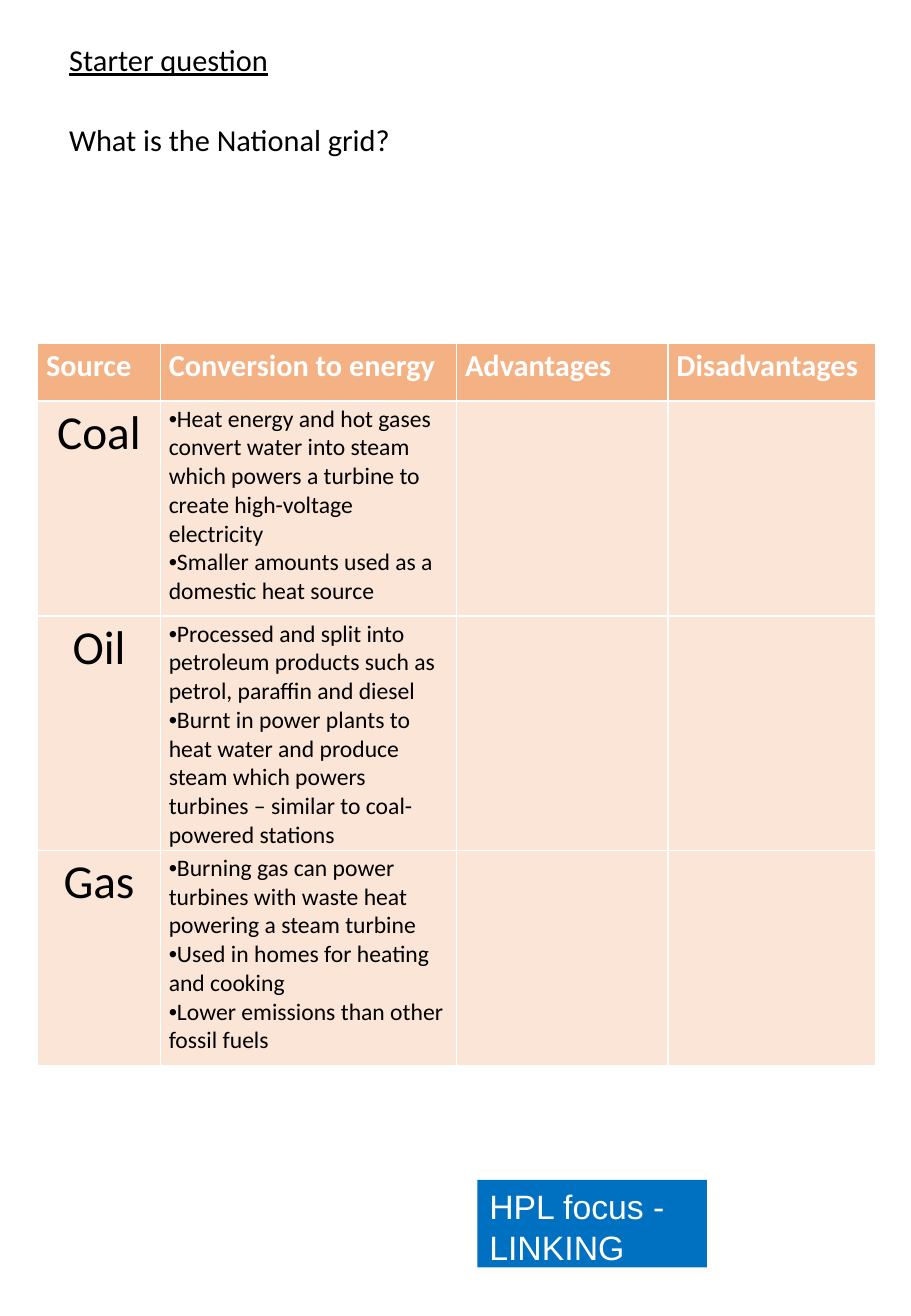
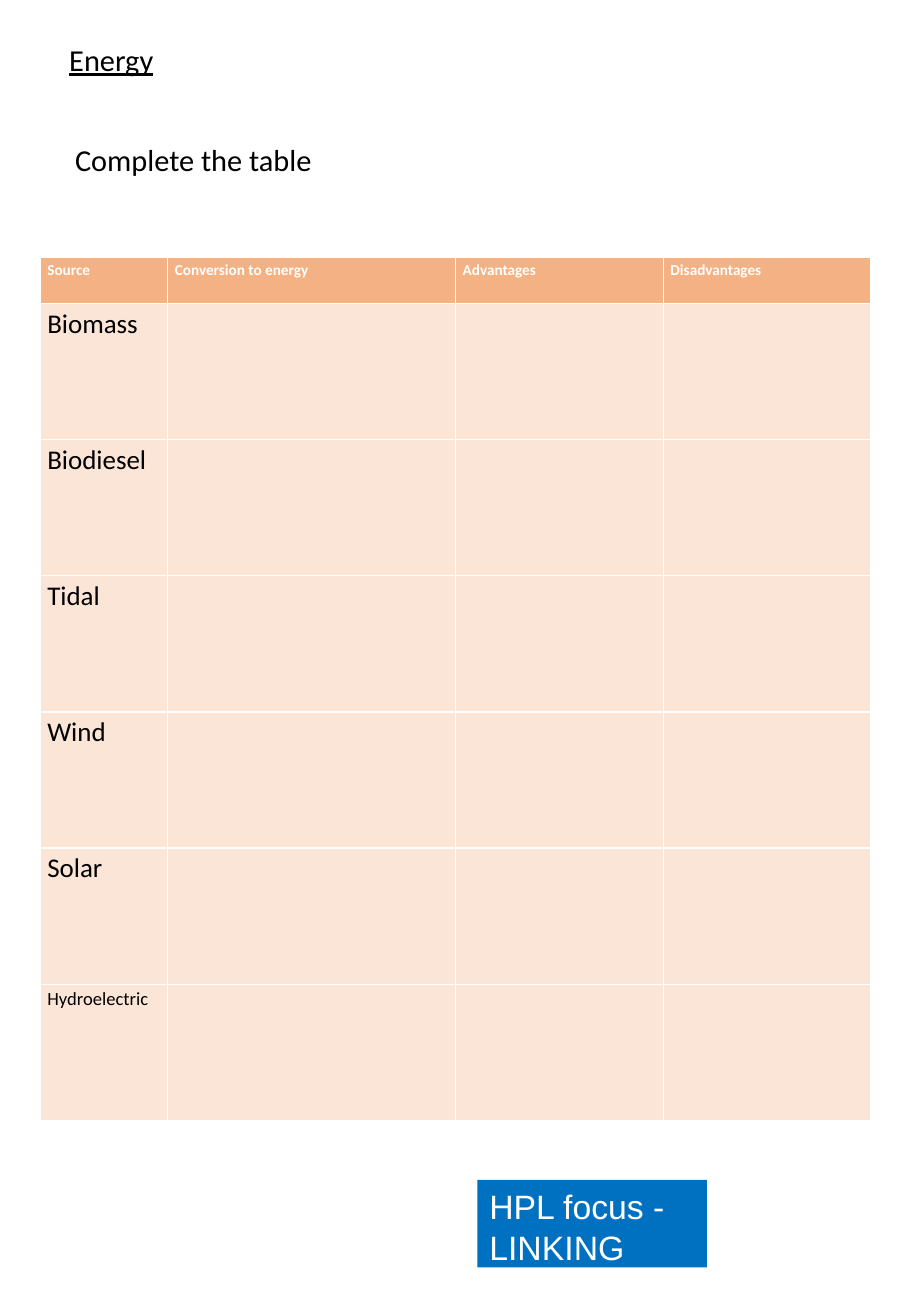
from pptx import Presentation
from pptx import util as u
from pptx.dml import color
from pptx.enum import shapes, text
from pptx.oxml import ns
from lxml import etree


def rgb(value):
    return color.RGBColor.from_string(value)


class Worksheet:
    BODY_FONT, LABEL_FONT = "Calibri", "Arial"
    BLACK, WHITE, BLUE = "000000", "FFFFFF", "0070C0"
    HEADER_FILL, ROW_FILL = "F4B183", "FBE5D6"

    def __init__(self):
        self.deck = Presentation()
        self.deck.slide_width = u.Inches(7.5)
        self.deck.slide_height = u.Inches(10.83)
        self.page = None

    def style(self, frame, size, ink=BLACK, face=BODY_FONT, bold=False,
              underline=False, align=text.PP_ALIGN.LEFT):
        for para in frame.paragraphs:
            para.alignment = align
            for span in para.runs:
                span.font.size = u.Pt(size)
                span.font.name = face
                span.font.bold = bold
                span.font.underline = underline
                span.font.color.rgb = rgb(ink)

    def place(self, box, left, top, width, height):
        box.left, box.top = u.Inches(left), u.Inches(top)
        box.width, box.height = u.Inches(width), u.Inches(height)

    def line_of_text(self, box, words, underline=False):
        frame = box.text_frame
        frame.text = words
        frame.word_wrap = False
        frame.auto_size = text.MSO_AUTO_SIZE.SHAPE_TO_FIT_TEXT
        frame.vertical_anchor = text.MSO_ANCHOR.TOP
        self.style(frame, 18, underline=underline)

    def add_page(self, title, title_width):
        self.page = self.deck.slides.add_slide(self.deck.slide_layouts[5])
        self.focus_label()
        box = self.page.shapes.title
        self.place(box, 0.47, 0.29, title_width, 0.4)
        self.line_of_text(box, title, underline=True)

    def focus_label(self):
        box = self.page.shapes.add_shape(
            shapes.MSO_SHAPE.RECTANGLE, u.Inches(3.93), u.Inches(9.71),
            u.Inches(1.89), u.Inches(0.72))
        box.shadow.inherit = False
        box.fill.solid()
        box.fill.fore_color.rgb = rgb(self.BLUE)
        box.line.fill.background()
        frame = box.text_frame
        frame.text = "HPL focus - LINKING"
        frame.word_wrap = True
        frame.vertical_anchor = text.MSO_ANCHOR.TOP
        self.style(frame, 20, self.WHITE, self.LABEL_FONT)

    def instruction(self, words, left, top, width):
        box = self.page.shapes.add_textbox(
            u.Inches(left), u.Inches(top), u.Inches(width), u.Inches(0.4))
        self.line_of_text(box, words)

    def bullets(self, frame):
        for para in frame.paragraphs:
            properties = para._p.get_or_add_pPr()
            properties.set("marL", "0")
            properties.set("indent", "0")
            font = etree.SubElement(properties, ns.qn("a:buFont"))
            font.set("typeface", self.LABEL_FONT)
            bullet = etree.SubElement(properties, ns.qn("a:buChar"))
            bullet.set("char", "•")

    def borders(self, cell):
        properties = cell._tc.get_or_add_tcPr()
        for side in ("lnL", "lnR", "lnT", "lnB"):
            line = etree.SubElement(properties, ns.qn("a:" + side))
            line.set("w", str(u.Pt(0.75)))
            fill = etree.SubElement(line, ns.qn("a:solidFill"))
            etree.SubElement(fill, ns.qn("a:srgbClr")).set("val", self.WHITE)

    def table(self, left, top, widths, heights, rows, header_size, inset):
        grid = self.page.shapes.add_table(
            len(heights), len(widths), u.Inches(left), u.Inches(top),
            u.Inches(sum(widths)), u.Inches(sum(heights))).table
        for column, width in zip(grid.columns, widths):
            column.width = u.Inches(width)
        for row, height in zip(grid.rows, heights):
            row.height = u.Inches(height)
        for cell in grid.iter_cells():
            self.borders(cell)
            cell.margin_left = cell.margin_right = u.Inches(inset)
            cell.margin_top = cell.margin_bottom = u.Inches(0.03)
            cell.fill.solid()
            cell.fill.fore_color.rgb = rgb(self.ROW_FILL)
        headings = ("Source", "Conversion to energy", "Advantages", "Disadvantages")
        for cell, heading in zip(grid.rows[0].cells, headings):
            cell.fill.fore_color.rgb = rgb(self.HEADER_FILL)
            cell.text_frame.text = heading
            self.style(cell.text_frame, header_size, self.WHITE, bold=True)
        for index, (source, size, align, points) in enumerate(rows, 1):
            name = grid.cell(index, 0).text_frame
            name.text = source
            self.style(name, size, align=align)
            if points:
                conversion = grid.cell(index, 1).text_frame
                conversion.text = "\n".join(points)
                self.bullets(conversion)
                self.style(conversion, 14)


FOSSIL_FUELS = {
    "Coal": [
        "Heat energy and hot gases convert water into steam which powers a turbine to create high-voltage electricity",
        "Smaller amounts used as a domestic heat source",
    ],
    "Oil": [
        "Processed and split into petroleum products such as petrol, paraffin and diesel",
        "Burnt in power plants to heat water and produce steam which powers turbines – similar to coal-powered stations",
    ],
    "Gas": [
        "Burning gas can power turbines with waste heat powering a steam turbine",
        "Used in homes for heating and cooking",
        "Lower emissions than other fossil fuels",
    ],
}
RENEWABLES = {"Biomass": 16, "Biodiesel": 16, "Tidal": 16, "Wind": 16,
              "Solar": 16, "Hydroelectric": 11}


def main():
    sheet = Worksheet()

    sheet.add_page("Starter question", 1.86)
    sheet.instruction("What is the National grid?", 0.47, 0.95, 2.88)
    fuels = [(source, 28, text.PP_ALIGN.CENTER, points)
             for source, points in FOSSIL_FUELS.items()]
    sheet.table(0.31, 2.83, [1.01, 2.44, 1.74, 1.71], [0.47, 1.77, 1.88, 1.77],
                fuels, 18, 0.07)

    sheet.add_page("Energy", 0.9)
    renewables = [(source, size, text.PP_ALIGN.LEFT, [])
                  for source, size in RENEWABLES.items()]
    sheet.table(0.33, 2.12, [1.05, 2.37, 1.71, 1.71],
                [0.38] + [1.12] * len(renewables), renewables, 9, 0.06)
    sheet.instruction("Complete the table", 0.52, 1.11, 2.17)

    sheet.deck.save("out.pptx")


if __name__ == "__main__":
    main()
